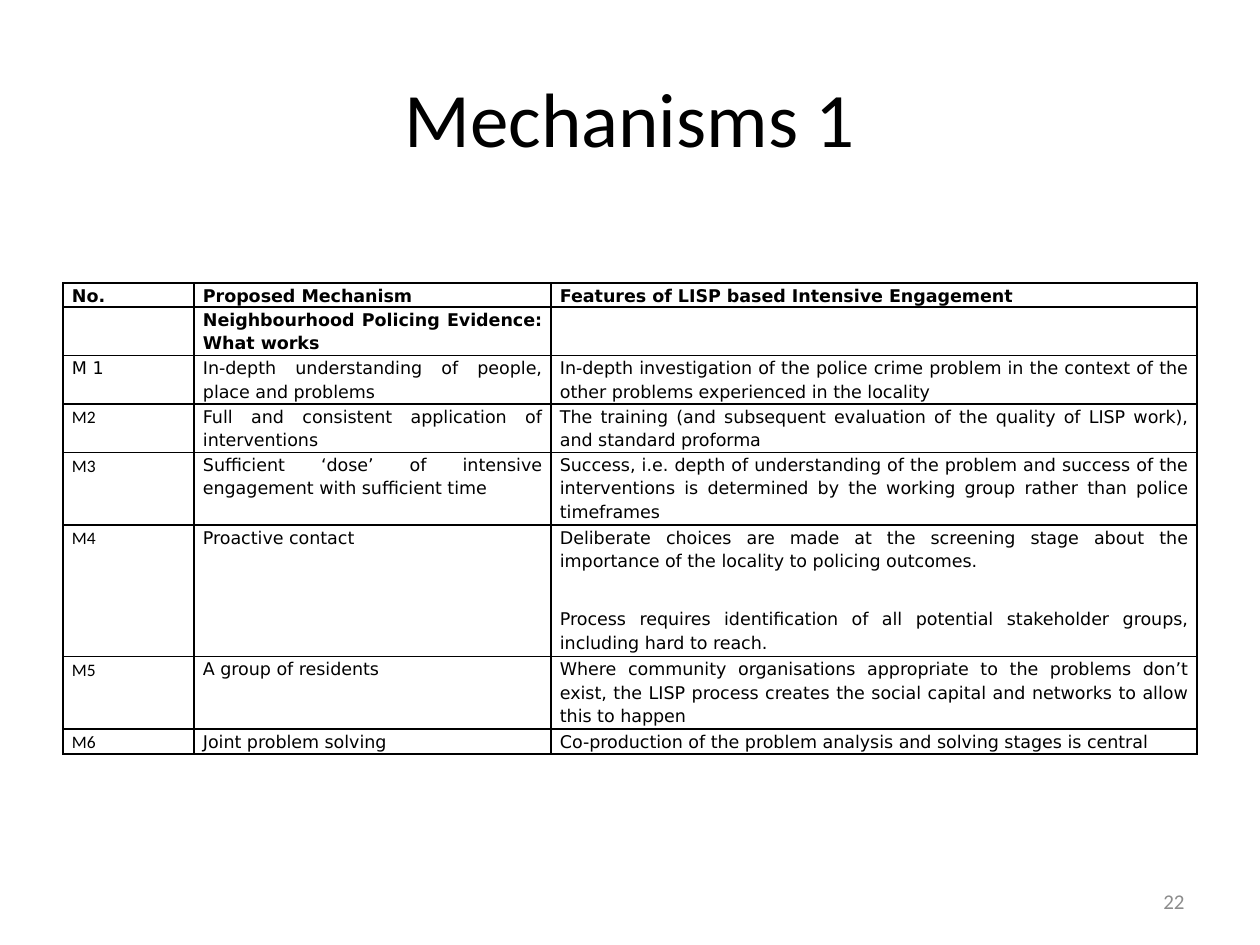
from lxml import etree
from pptx import Presentation
from pptx.dml.color import RGBColor
from pptx.enum.text import MSO_ANCHOR as ANCHOR, PP_ALIGN as ALIGN
from pptx.oxml.ns import qn
from pptx.util import Pt

PX = 914400 // 126
BLACK = RGBColor(0x00, 0x00, 0x00)
GRAY = RGBColor(0x8C, 0x8C, 0x8C)

COLS = [131, 357, 646]
ROWS = [
    (23, "No.", "Proposed Mechanism", "Features of LISP based Intensive Engagement"),
    (47, "", "Neighbourhood Policing Evidence: What works", ""),
    (47, "M 1", "In-depth understanding of people, place and problems",
     "In-depth investigation of the police crime problem in the context of the other problems experienced in the locality"),
    (47, "M2", "Full and consistent application of interventions",
     "The training (and subsequent evaluation of the quality of LISP work), and standard proforma"),
    (70, "M3", "Sufficient ‘dose’ of intensive engagement with sufficient time",
     "Success, i.e. depth of understanding of the problem and success of the interventions is determined by the working group rather than police timeframes"),
    (129, "M4", "Proactive contact",
     "Deliberate choices are made at the screening stage about the importance of the locality to policing outcomes.\n"
     "Process requires identification of all potential stakeholder groups, including hard to reach."),
    (70, "M5", "A group of residents",
     "Where community organisations appropriate to the problems don’t exist, the LISP process creates the social capital and networks to allow this to happen"),
    (25, "M6", "Joint problem solving",
     "Co-production of the problem analysis and solving stages is central"),
]


def set_font(p, name, size, color, bold=False):
    p.font.name = name
    p.font.size = Pt(size)
    p.font.bold = bold
    p.font.color.rgb = color


def add_borders(cell):
    tc_pr = cell._tc.get_or_add_tcPr()
    for i, side in enumerate(("lnL", "lnR", "lnT", "lnB")):
        ln = etree.Element(qn(f"a:{side}"), w=str(Pt(1)))
        fill = etree.SubElement(ln, qn("a:solidFill"))
        etree.SubElement(fill, qn("a:srgbClr"), val=str(BLACK))
        tc_pr.insert(i, ln)


prs = Presentation()
prs.slide_width, prs.slide_height = 1260 * PX, 945 * PX
s = prs.slides.add_slide(prs.slide_layouts[6])

for text, box, size, color, align in (
    ("Mechanisms 1", (63, 38, 1134, 158), 44, BLACK, ALIGN.CENTER),
    ("22", (903, 876, 294, 50), 12, GRAY, ALIGN.RIGHT),
):
    tf = s.shapes.add_textbox(*(v * PX for v in box)).text_frame
    tf.word_wrap = True
    tf.vertical_anchor = ANCHOR.MIDDLE
    p = tf.paragraphs[0]
    p.text = text
    p.alignment = align
    set_font(p, "Calibri", size, color)

height = sum(row[0] for row in ROWS)
table = s.shapes.add_table(len(ROWS), len(COLS), 63 * PX, 283 * PX,
                           sum(COLS) * PX, height * PX).table
table.first_row = table.horz_banding = False
for col, width in zip(table.columns, COLS):
    col.width = width * PX

for i, (row_height, *texts) in enumerate(ROWS):
    table.rows[i].height = row_height * PX
    for j, text in enumerate(texts):
        cell = table.cell(i, j)
        cell.fill.background()
        add_borders(cell)
        cell.margin_left = cell.margin_right = 9 * PX
        cell.margin_top = cell.margin_bottom = 0
        cell.text_frame.text = text
        plain_label = j == 0 and i > 2
        for p in cell.text_frame.paragraphs:
            p.alignment = ALIGN.LEFT if plain_label else ALIGN.JUSTIFY
            p.line_spacing = 1.15
            p.space_before = Pt(0 if plain_label else 10)
            p.space_after = Pt(10)
            set_font(p, "Calibri" if plain_label else "DejaVu Sans", 10, BLACK, i < 2)

prs.save("out.pptx")
